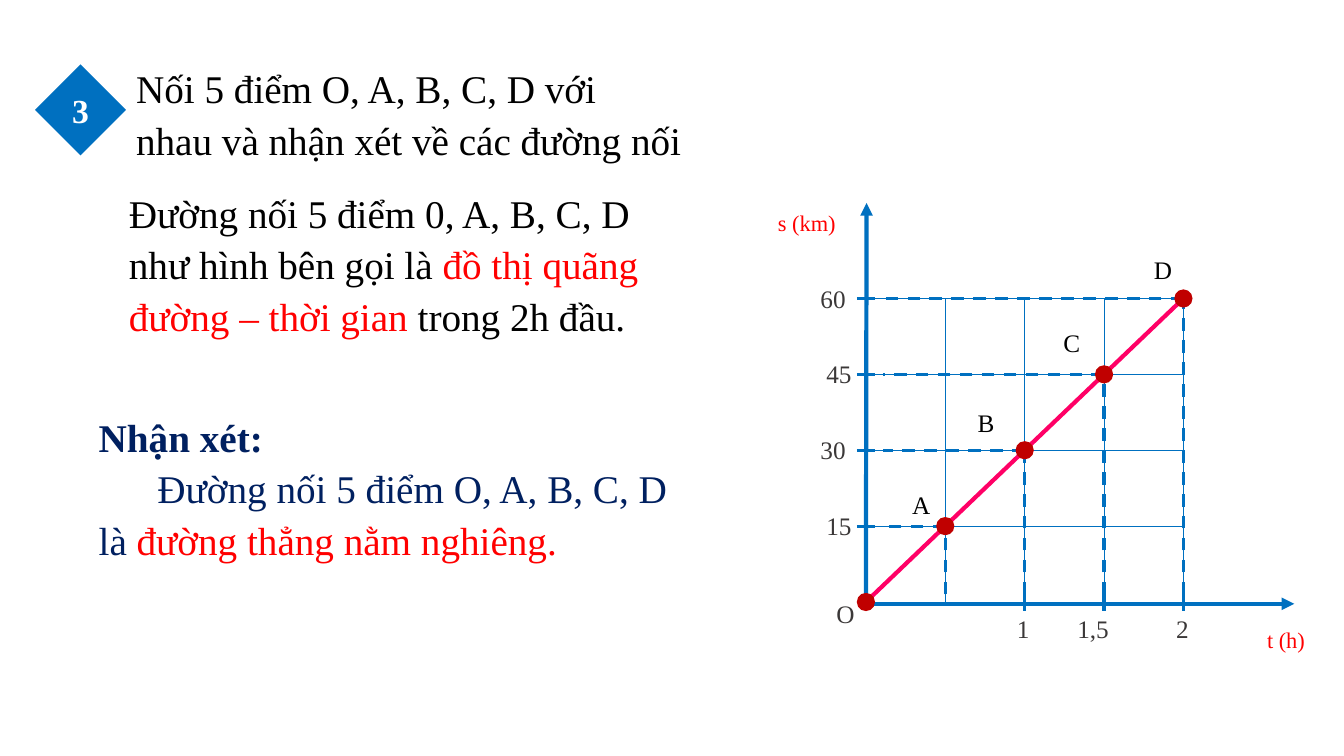
from lxml import etree
from pptx import Presentation
from pptx.dml.color import RGBColor
from pptx.enum.dml import MSO_LINE_DASH_STYLE as Dash
from pptx.enum.shapes import MSO_CONNECTOR as Connector, MSO_SHAPE as Shape
from pptx.enum.text import MSO_ANCHOR as Anchor, MSO_AUTO_SIZE as AutoSize, PP_ALIGN as Align
from pptx.oxml.ns import qn
from pptx.util import Pt

COLORS = {
    "blue": "0070C0", "navy": "002060", "red": "FF0000", "dot": "C00000",
    "pink": "FF0066", "gray": "3B3838", "black": "000000", "white": "FFFFFF",
}
FONT = "Times New Roman"

presentation = Presentation()
presentation.slide_width, presentation.slide_height = Pt(960), Pt(540)
slide = presentation.slides.add_slide(presentation.slide_layouts[5])
shapes = slide.shapes


def write(shape, text, size=28, color="black", bold=False, spacing=1.1,
          align=Align.LEFT, anchor=Anchor.TOP, indent=0, new_paragraph=False):
    frame = shape.text_frame
    frame.word_wrap = True
    frame.vertical_anchor = anchor
    paragraph = frame.add_paragraph() if new_paragraph else frame.paragraphs[-1]
    paragraph.alignment = align
    paragraph.line_spacing = spacing
    if indent:
        paragraph._p.get_or_add_pPr().set("indent", str(Pt(indent)))
    run = paragraph.add_run()
    run.text = text
    run.font.name = FONT
    run.font.size = Pt(size)
    run.font.bold = bold
    run.font.color.rgb = RGBColor.from_string(COLORS[color])


def draw_line(start, end, color="blue", width=2.25, dashed=False, arrow=False):
    line = shapes.add_connector(Connector.STRAIGHT, *map(Pt, start + end))
    line.line.color.rgb = RGBColor.from_string(COLORS[color])
    line.line.width = Pt(width)
    if dashed:
        line.line.dash_style = Dash.DASH
    if arrow:
        etree.SubElement(line.line._get_or_add_ln(), qn("a:tailEnd"), type="triangle")
    etree.SubElement(line._element.spPr, qn("a:effectLst"))


title = shapes.title
title.left, title.top, title.width, title.height = Pt(90), Pt(39), Pt(404), Pt(79)
title.text_frame.auto_size = AutoSize.NONE
write(title, "Nối 5 điểm O, A, B, C, D với nhau và nhận xét về các đường nối")

ORIGIN_X, ORIGIN_Y = 618.5, 430
STEP_X, STEP_Y = 56.7, 54.2
points = [(ORIGIN_X + STEP_X * i, ORIGIN_Y - STEP_Y * i) for i in range(5)]
grid_top = points[-1][1]

grid = shapes.add_table(4, 4, Pt(ORIGIN_X), Pt(grid_top), Pt(4 * STEP_X), Pt(4 * STEP_Y)).table
grid.first_row = grid.horz_banding = False
for cell in grid.iter_cells():
    properties = cell._tc.get_or_add_tcPr()
    for side in ("lnL", "lnR", "lnT", "lnB"):
        border = etree.SubElement(properties, qn(f"a:{side}"), w=str(Pt(0.5)))
        fill = etree.SubElement(border, qn("a:solidFill"))
        etree.SubElement(fill, qn("a:srgbClr"), val=COLORS["blue"])
    cell.fill.background()

draw_line(points[0], points[-1], color="pink", width=3)

badge = shapes.add_shape(Shape.DIAMOND, Pt(25), Pt(46), Pt(65), Pt(65))
badge.shadow.inherit = False
badge.fill.solid()
badge.fill.fore_color.rgb = RGBColor.from_string(COLORS["blue"])
badge.line.fill.background()
write(badge, "3", size=24, color="white", bold=True, spacing=1,
      align=Align.CENTER, anchor=Anchor.MIDDLE)

passages = [
    ((85, 128, 404, 117), [
        ("Đường nối 5 điểm 0, A, B, C, D như hình bên gọi là ", {}),
        ("đồ thị quãng đường – thời gian", {"color": "red"}),
        (" trong 2h đầu.", {}),
    ]),
    ((63.4, 288, 441, 117), [
        ("Nhận xét:", {"color": "navy", "bold": True}),
        ("Đường nối 5 điểm O, A, B, C, D là ",
         {"color": "navy", "indent": 42, "new_paragraph": True}),
        ("đường thẳng nằm nghiêng.", {"color": "red", "indent": 42}),
    ]),
]
for box, runs in passages:
    passage = shapes.add_textbox(*map(Pt, box))
    for text, style in runs:
        write(passage, text, **style)

AXIS_Y = 431.3
draw_line((ORIGIN_X, AXIS_Y), (619, 145), width=3, arrow=True)
draw_line((ORIGIN_X, AXIS_Y), (924.5, AXIS_Y), width=3, arrow=True)

for x, y in points[1:]:
    draw_line((x, y), (ORIGIN_X + 12, y), dashed=True)
    draw_line((x, 424.5), (x, y), dashed=True)
    draw_line((ORIGIN_X - 6.5, y), (ORIGIN_X + 6.5, y))
for x, y in points[2:]:
    draw_line((x, 424), (x, 436.5))

DOT = 13
for x, y in points:
    dot = shapes.add_shape(Shape.OVAL, Pt(x - DOT / 2), Pt(y - DOT / 2), Pt(DOT), Pt(DOT))
    dot.shadow.inherit = False
    dot.fill.solid()
    dot.fill.fore_color.rgb = RGBColor.from_string(COLORS["dot"])
    dot.line.fill.background()

tick = {"size": 18, "color": "gray", "spacing": 1}
unit = {"size": 16, "color": "red"}
name = {"size": 18, "spacing": 1}
labels = [
    ("O", 590.4, 424, 28, tick),
    ("1", 719.3, 434.2, 28, tick),
    ("1,5", 762.5, 434.2, 53, tick),
    ("2", 833, 434.2, 28, tick),
    ("15", 583.2, 360.7, 40, tick),
    ("30", 579, 306.7, 50, tick),
    ("45", 583.2, 252.7, 50, tick),
    ("60", 579, 198.7, 50, tick),
    ("t (h)", 898, 442, 53, unit),
    ("s (km)", 548.6, 144, 65, unit),
    ("A", 644.4, 345.6, 43, name),
    ("B", 691.2, 287.3, 43, name),
    ("C", 752.4, 230.4, 43, name),
    ("D", 817.2, 177.8, 43, name),
]
for text, left, top, width, style in labels:
    write(shapes.add_textbox(Pt(left), Pt(top), Pt(width), Pt(29)), text, **style)

presentation.save("out.pptx")
